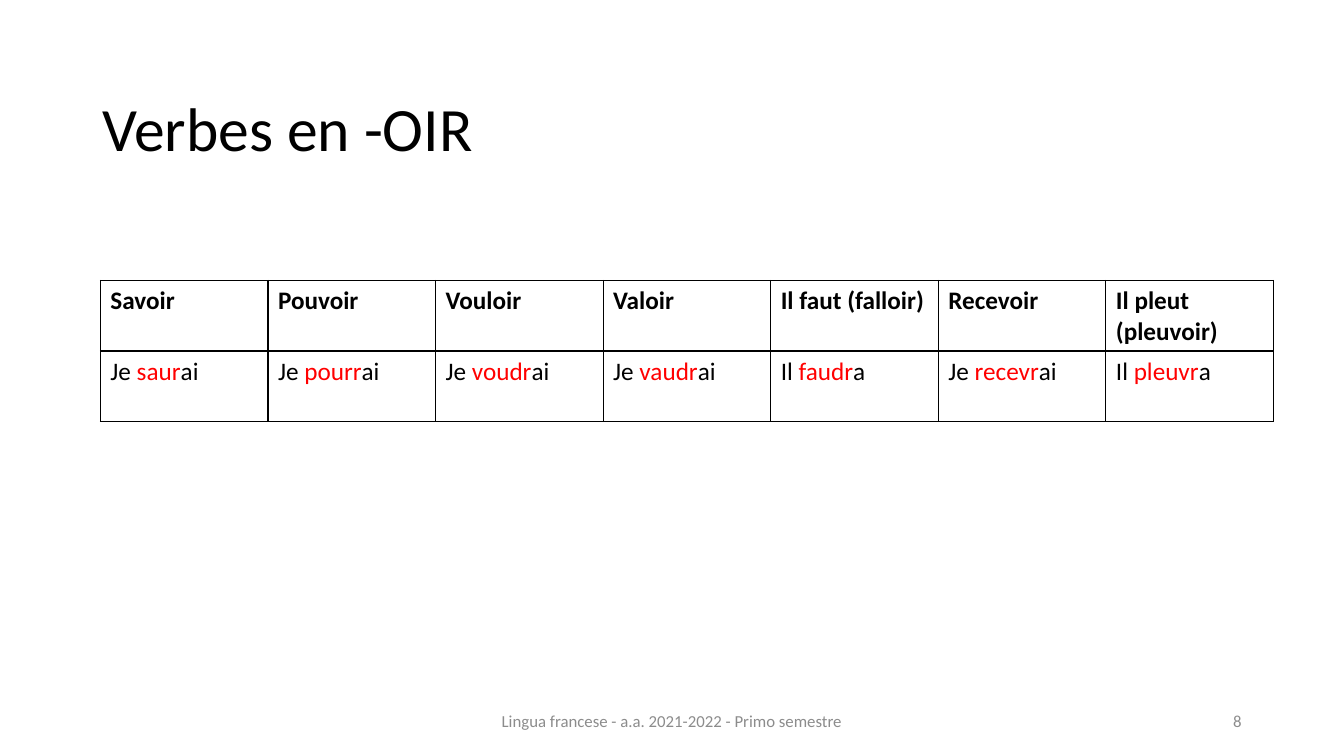
from lxml import etree
from pptx import Presentation
from pptx.dml.color import RGBColor
from pptx.enum import text
from pptx.oxml import ns
from pptx.util import Pt

BLACK = RGBColor(0x00, 0x00, 0x00)
RED = RGBColor(0xFF, 0x00, 0x00)
GREY = RGBColor(0x8C, 0x8C, 0x8C)

TITLE = {"size": Pt(44), "color": BLACK}
HEAD = {"size": Pt(18), "color": BLACK, "bold": True}
PLAIN = {"size": Pt(18), "color": BLACK, "bold": False}
STEM = {**PLAIN, "color": RED}
SMALL = {"size": Pt(12), "color": GREY}

# infinitive, then pronoun, future stem and ending
VERBS = [
    ("Savoir", "Je ", "saur", "ai"),
    ("Pouvoir", "Je ", "pourr", "ai"),
    ("Vouloir", "Je ", "voudr", "ai"),
    ("Valoir", "Je ", "vaudr", "ai"),
    ("Il faut (falloir)", "Il ", "faudr", "a"),
    ("Recevoir", "Je ", "recevr", "ai"),
    ("Il pleut (pleuvoir)", "Il ", "pleuvr", "a"),
]


def add_run(para, words, style):
    run = para.add_run()
    run.text = words
    run.font.name = "Calibri"
    for key, value in style.items():
        if key == "color":
            run.font.color.rgb = value
        else:
            setattr(run.font, key, value)


def add_label(slide, box, words, style, align=text.PP_ALIGN.LEFT, spacing=1.0):
    frame = slide.shapes.add_textbox(*map(Pt, box)).text_frame
    frame.word_wrap = True
    frame.vertical_anchor = text.MSO_ANCHOR.MIDDLE
    para = frame.paragraphs[0]
    para.alignment = align
    para.line_spacing = spacing
    add_run(para, words, style)


def frame_cell(cell):
    """Draw a thin black border on all sides and leave the cell unfilled."""
    props = cell._tc.get_or_add_tcPr()
    for side in ("lnL", "lnR", "lnT", "lnB"):
        line = etree.SubElement(props, ns.qn("a:" + side), w=str(Pt(1)))
        solid = etree.SubElement(line, ns.qn("a:solidFill"))
        etree.SubElement(solid, ns.qn("a:srgbClr"), val=str(BLACK))
    cell.fill.background()


def add_verbs(slide, box):
    left, top, width, height = box
    table = slide.shapes.add_table(2, len(VERBS), *map(Pt, box)).table
    table.first_row = table.horz_banding = False
    for row in table.rows:
        row.height = Pt(height / 2)
    for col, (verb, *parts) in enumerate(VERBS):
        table.columns[col].width = Pt(width / len(VERBS))
        head, form = table.cell(0, col), table.cell(1, col)
        add_run(head.text_frame.paragraphs[0], verb, HEAD)
        for words, style in zip(parts, (PLAIN, STEM, PLAIN)):
            add_run(form.text_frame.paragraphs[0], words, style)
        for cell in (head, form):
            frame_cell(cell)


def add_footer(slide, box):
    left, top, width, height = box
    add_label(slide, (left, top, 324, height),
              "Lingua francese - a.a. 2021-2022 - Primo semestre",
              SMALL, text.PP_ALIGN.CENTER)
    add_label(slide, (left + width - 216, top, 216, height), "8",
              SMALL, text.PP_ALIGN.RIGHT)


def main():
    deck = Presentation()
    deck.slide_width, deck.slide_height = Pt(960), Pt(540)
    slide = deck.slides.add_slide(deck.slide_layouts[6])
    add_label(slide, (66, 41.75, 828, 104.4), "Verbes en -OIR", TITLE, spacing=0.9)
    add_verbs(slide, (71.7, 200.3, 838, 101))
    add_footer(slide, (318, 500.5, 576, 28.75))
    deck.save("out.pptx")


if __name__ == "__main__":
    main()
